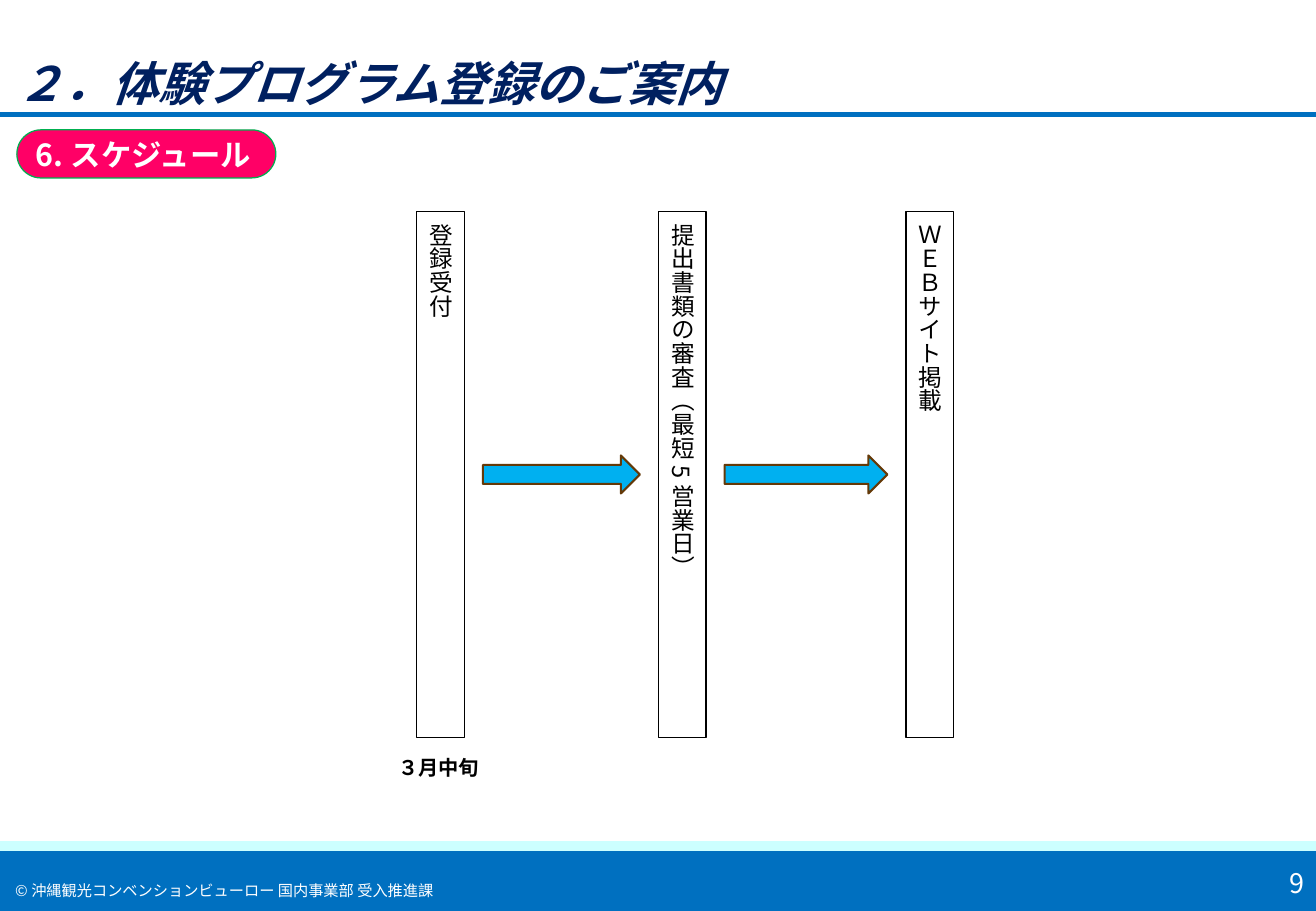
"""Build the schedule slide of the experience programme registration guide."""
from dataclasses import dataclass

from lxml.etree import SubElement
from pptx import Presentation
from pptx.dml.color import RGBColor
from pptx.enum.shapes import MSO_CONNECTOR, MSO_SHAPE
from pptx.enum.text import MSO_ANCHOR, PP_ALIGN
from pptx.oxml.ns import qn
from pptx.util import Pt


@dataclass(frozen=True)
class Theme:
    font: str = "Noto Sans CJK JP"
    blue: str = "0070C0"
    pale: str = "CCFFFF"
    navy: str = "002060"
    pink: str = "FF0066"
    green: str = "00B050"
    sky: str = "00B0F0"
    brown: str = "643908"
    white: str = "FFFFFF"
    black: str = "000000"
    title_size: int = 28
    heading_size: int = 18
    number_size: int = 16
    step_size: int = 14
    date_size: int = 12
    footer_size: int = 9


theme = Theme()
presentation = Presentation()
presentation.slide_width = Pt(780)
presentation.slide_height = Pt(540)
slide = presentation.slides.add_slide(presentation.slide_layouts[6])


def add_block(kind, left, top, width, height, fill, line, line_width):
    shape = slide.shapes.add_shape(kind, Pt(left), Pt(top), Pt(width), Pt(height))
    shape.shadow.inherit = False
    if fill:
        shape.fill.solid()
        shape.fill.fore_color.rgb = RGBColor.from_string(fill)
    else:
        shape.fill.background()
    shape.line.color.rgb = RGBColor.from_string(line)
    shape.line.width = Pt(line_width)
    return shape


def write(shape, text, size, color, align=PP_ALIGN.LEFT, anchor=MSO_ANCHOR.MIDDLE,
          bold=False, italic=False, wrap=True):
    frame = shape.text_frame
    frame.word_wrap = wrap
    frame.vertical_anchor = anchor
    paragraph = frame.paragraphs[0]
    paragraph.text = text
    paragraph.alignment = align
    font = paragraph.font
    font.size = Pt(size)
    font.bold = bold
    font.italic = italic
    font.color.rgb = RGBColor.from_string(color)
    font.name = theme.font
    properties = paragraph._p.pPr.find(qn("a:defRPr"))
    SubElement(properties, qn("a:ea")).set("typeface", theme.font)
    return frame


add_block(MSO_SHAPE.RECTANGLE, 0, 504, 780, 36, theme.blue, theme.blue, 1.25)
add_block(MSO_SHAPE.RECTANGLE, 0, 499, 780, 5, theme.pale, theme.pale, 1.25)

title_rule = slide.shapes.add_connector(MSO_CONNECTOR.STRAIGHT, 0, Pt(67.8), Pt(780), Pt(67.8))
title_rule.line.color.rgb = RGBColor.from_string(theme.blue)
title_rule.line.width = Pt(3)
SubElement(title_rule._element.spPr, qn("a:effectLst"))

heading = add_block(MSO_SHAPE.ROUNDED_RECTANGLE, 10, 77, 153.5, 28.5, theme.pink, theme.green, 0.75)
heading.adjustments[0] = 0.5
heading_frame = write(heading, "6.スケジュール", theme.heading_size, theme.white, bold=True)
heading_frame.margin_right = 0

title = slide.shapes.add_textbox(0, Pt(28), Pt(438.5), Pt(37.5))
title_frame = write(title, "２．体験プログラム登録のご案内", theme.title_size, theme.navy,
                    PP_ALIGN.CENTER, MSO_ANCHOR.BOTTOM, bold=True, italic=True, wrap=False)
title_frame.margin_bottom = 0

footer = slide.shapes.add_textbox(0, Pt(519), Pt(265.5), Pt(18))
write(footer, "©沖縄観光コンベンションビューロー 国内事業部 受入推進課", theme.footer_size,
      theme.white, PP_ALIGN.CENTER, MSO_ANCHOR.BOTTOM, wrap=False)

page_number = slide.shapes.add_textbox(Pt(695.5), Pt(508.5), Pt(84.5), Pt(29))
write(page_number, "9", theme.number_size, theme.white, PP_ALIGN.RIGHT)

start_date = slide.shapes.add_textbox(Pt(229), Pt(444), Pt(63.5), Pt(22))
write(start_date, "３月中旬", theme.date_size, theme.black,
      anchor=MSO_ANCHOR.TOP, bold=True, wrap=False)

steps = [(247, "登録受付"), (390.25, "提出書類の審査（最短5営業日）"), (537, "ＷＥＢサイト掲載")]
step_top, step_width, step_height = 125.25, 28.25, 312
arrow_gap, arrow_height = 11, 22.5
for left, text in steps:
    step = add_block(MSO_SHAPE.RECTANGLE, left, step_top, step_width, step_height,
                     None, theme.black, 0.75)
    step_frame = write(step, text, theme.step_size, theme.black)
    step_frame._txBody.bodyPr.set("vert", "eaVert")

arrow_top = step_top + (step_height - arrow_height) / 2
for (left, _), (next_left, _) in zip(steps, steps[1:]):
    arrow_left = left + step_width + arrow_gap
    add_block(MSO_SHAPE.RIGHT_ARROW, arrow_left, arrow_top,
              next_left - arrow_gap - arrow_left, arrow_height, theme.sky, theme.brown, 1.25)

presentation.save("out.pptx")
